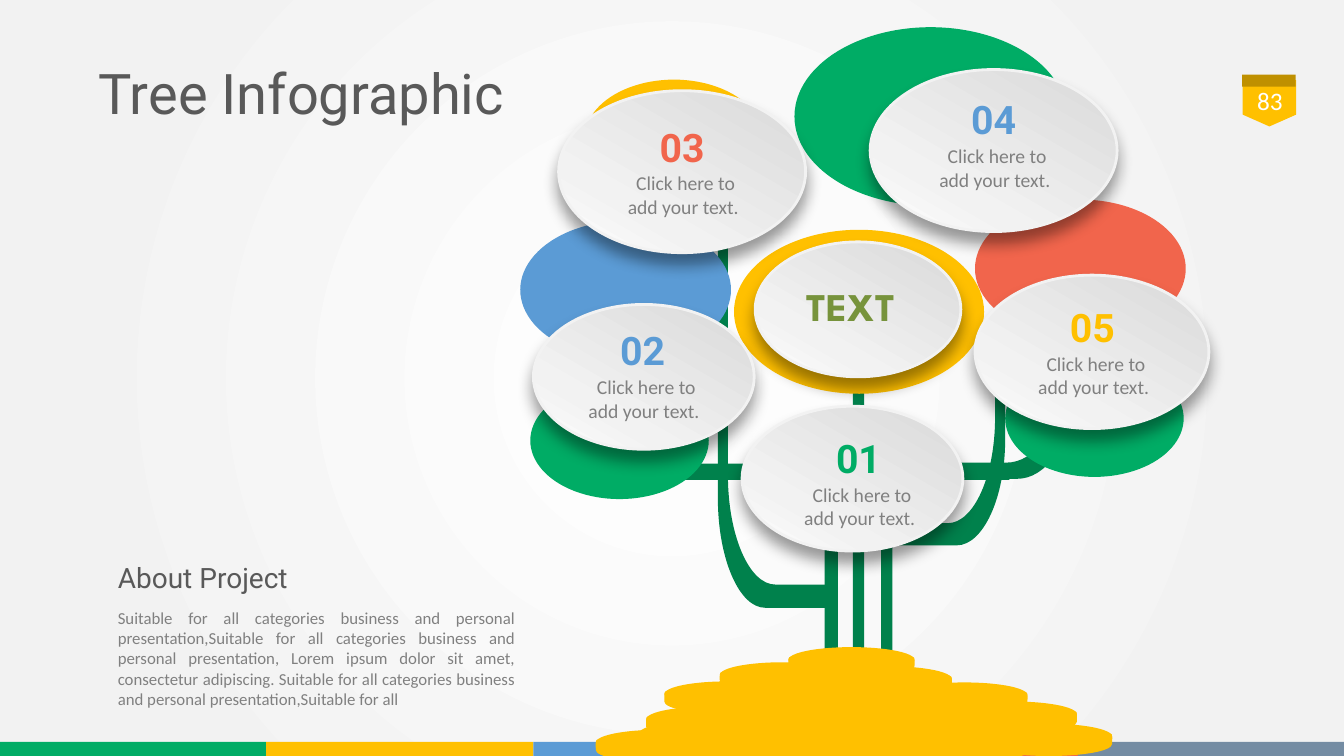
from pptx import Presentation
from pptx.dml.color import RGBColor
from pptx.enum.shapes import MSO_SHAPE
from pptx.enum.text import MSO_ANCHOR, PP_ALIGN
from pptx.oxml import parse_xml
from pptx.oxml.ns import nsdecls, qn
from pptx.util import Cm, Pt

OVAL, RECTANGLE, PENTAGON = MSO_SHAPE.OVAL, MSO_SHAPE.RECTANGLE, MSO_SHAPE.PENTAGON
LEFT, CENTER, JUSTIFY = PP_ALIGN.LEFT, PP_ALIGN.CENTER, PP_ALIGN.JUSTIFY
TOP, MIDDLE = MSO_ANCHOR.TOP, MSO_ANCHOR.MIDDLE

THEME = {
    "green": "00AC65", "yellow": "FFC000", "blue": "5B9BD5", "red": "F1654C",
    "slate": "748CA3", "gold": "BF9000", "branch": "00814C", "olive": "77933C",
    "rim": "F2F2F2", "heading": "595959", "body": "808080", "white": "FFFFFF",
    "background": [(0, "FFFFFF"), (81, "F2F2F2"), (100, "F2F2F2")],
    "card": [(1, "D9D9D9"), (71, "F2F2F2"), (100, "FFFFFF")],
    "title_size": 40, "number_size": 28, "subtitle_size": 20,
    "page_size": 18, "label_size": 14, "body_size": 12,
    "heading_font": "Roboto", "body_font": "Calibri", "center_font": "League Spartan",
}

# All positions and lengths are in inches.
SLIDE_WIDTH, SLIDE_HEIGHT = 13.33, 7.5
OVAL_RATIO = 0.656
STRIPE_HEIGHT = 0.14
STRIPES = [(0, "green"), (2.64, "yellow"), (5.29, "blue"), (8.04, "red"), (10.69, "slate")]

TITLE = "Tree Infographic"
PAGE_NUMBER = "83"
CENTER_TEXT = "TEXT"
LABEL = "Click here to add your text. "
ABOUT_TITLE = "About Project"
ABOUT_TEXT = (
    "Suitable for all categories business and personal presentation,"
    "Suitable for all categories business and personal presentation, "
    "Lorem ipsum dolor sit amet, consectetur adipiscing. "
    "Suitable for all categories business and personal presentation,Suitable for all"
)

# Outlines: a pair is a straight step, six numbers are a Bézier step.
BRANCHES = [
    [(7.3, 0.97), (7.25, 1.14, 7.22, 1.36, 7.22, 1.59), (7.22, 4.71),
     (7.22, 5.31, 7.43, 5.8, 7.69, 5.8), (8.28, 5.8), (8.28, 6.03), (7.59, 6.03),
     (7.33, 6.03, 7.12, 5.54, 7.12, 4.94), (7.12, 1.82), (7.12, 1.47, 7.19, 1.16, 7.3, 0.97)],
    [(6.76, 4.6), (7.67, 4.6), (8.03, 4.6, 8.31, 4.93, 8.31, 5.35), (8.31, 7.37),
     (8.18, 7.37), (8.18, 5.51), (8.18, 5.09, 7.9, 4.76, 7.55, 4.76), (6.76, 4.76)],
    [(9.78, 0.52), (9.84, 0.69, 9.87, 0.9, 9.87, 1.12), (9.87, 4.14),
     (9.87, 4.72, 9.66, 5.19, 9.4, 5.19), (8.81, 5.19), (8.81, 5.41), (9.49, 5.41),
     (9.75, 5.41, 9.97, 4.94, 9.97, 4.36), (9.97, 1.35), (9.97, 1.01, 9.9, 0.71, 9.78, 0.52)],
    [(10.41, 1.26), (10.47, 1.38, 10.5, 1.53, 10.5, 1.69), (10.5, 3.84),
     (10.5, 4.25, 10.27, 4.59, 9.98, 4.59), (9.34, 4.59), (9.34, 4.75), (10.09, 4.75),
     (10.37, 4.75, 10.61, 4.41, 10.61, 4), (10.61, 1.85),
     (10.61, 1.61, 10.53, 1.4, 10.41, 1.26)],
    [(9.27, 4.6), (10.01, 4.6), (10.01, 4.76), (9.37, 4.76),
     (9.08, 4.76, 8.85, 5.09, 8.85, 5.51), (8.85, 7.5), (8.74, 7.5), (8.74, 5.35),
     (8.74, 4.93, 8.98, 4.6, 9.27, 4.6)],
]
TRUNK = (8.46, 3.29, 0.11, 4.2)

# left, top, width, colour
LEAVES = [
    (7.28, 2.28, 2.48, "yellow"), (9.97, 3.57, 1.77, "green"), (9.67, 1.98, 2.09, "red"),
    (7.88, 0.27, 2.7, "green"), (5.26, 3.79, 1.77, "green"), (5.16, 2.19, 2.09, "blue"),
    (5.8, 0.79, 1.77, "yellow"),
]
# left, top, width
CARDS = [(7.36, 4.03, 2.19), (7.49, 2.4, 2.04), (5.29, 3.02, 2.19),
         (8.63, 0.69, 2.45), (9.67, 2.73, 2.32), (5.54, 0.9, 2.45)]
# number, left, top, colour
NUMBERS = [("01", 8.05, 4.35, "green"), ("02", 5.91, 3.28, "blue"), ("03", 6.3, 1.26, "red"),
           ("04", 9.39, 0.99, "blue"), ("05", 10.37, 3.05, "yellow")]

# Side of a coin, measured from the corner of its top face.
COIN_SIDE = [(0, 0.2), (-0.01, -0.03, 0.02, 0.2, 0.62, 0.08),
             (1.26, 0.19, 1.26, -0.02, 1.25, 0.2), (1.25, 0.27, 0.97, 0.32, 0.62, 0.32),
             (0.28, 0.32, 0, 0.27, 0, 0.2)]
COIN_SIZE = (1.25, 0.25)
COINS = [
    (6.41, 7.01), (7.06, 6.86), (7.99, 6.84), (8.91, 6.99), (8.94, 6.77), (8.19, 6.61),
    (7.29, 6.67), (7.14, 6.57), (7.82, 6.42), (7.38, 7.05), (8.21, 6.99), (6.59, 6.76),
    (5.91, 7.24), (6.34, 7.15), (7.02, 7.25), (8.04, 7.27), (8.96, 7.24), (9.78, 7.18),
    (9.43, 6.96),
]


def inches(value):
    return Cm(value * 2.54)


def color(name):
    return RGBColor.from_string(THEME[name])


def set_gradient(properties, stops, direction):
    """Replace the solid fill in properties; direction is the XML after the stops."""
    stop_xml = "".join(
        f'<a:gs pos="{position * 1000}"><a:srgbClr val="{value}"/></a:gs>'
        for position, value in stops)
    gradient = parse_xml(f'<a:gradFill {nsdecls("a")} rotWithShape="1">'
                         f"<a:gsLst>{stop_xml}</a:gsLst>{direction}</a:gradFill>")
    properties.replace(properties.find(qn("a:solidFill")), gradient)


def paint(shape, fill):
    shape.element.remove(shape.element.find(qn("p:style")))
    shape.shadow.inherit = False
    shape.fill.solid()
    shape.fill.fore_color.rgb = color(fill)
    shape.line.fill.background()
    return shape


def add_preset(slide, kind, box, fill):
    return paint(slide.shapes.add_shape(kind, *map(inches, box)), fill)


def add_oval(slide, left, top, width, fill):
    return add_preset(slide, OVAL, (left, top, width, width * OVAL_RATIO), fill)


def add_outline(slide, steps, fill, left=0, top=0):
    """Draw a closed outline, then join the three points of each Bézier step."""
    points = [(inches(left + x), inches(top + y))
              for step in steps for x, y in zip(step[::2], step[1::2])]
    builder = slide.shapes.build_freeform(*points[0])
    builder.add_line_segments(points[1:], close=True)
    shape = paint(builder.convert_to_shape(), fill)
    segments = iter(list(shape.element.iter(qn("a:lnTo"))))
    for step in steps[1:]:
        curve = next(segments)
        if len(step) == 6:
            bezier = parse_xml(f'<a:cubicBezTo {nsdecls("a")}/>')
            curve.addprevious(bezier)
            for segment in (curve, next(segments), next(segments)):
                bezier.append(segment[0])
                segment.getparent().remove(segment)


def add_card(slide, left, top, width):
    card = add_oval(slide, left, top, width, "rim")
    card.line.color.rgb = color("rim")
    card.line.width = Pt(2)
    properties = card.element.spPr
    set_gradient(properties, THEME["card"], '<a:lin ang="7200000" scaled="0"/>')
    properties.find(qn("a:effectLst")).append(parse_xml(
        f'<a:outerShdw {nsdecls("a")} blurRad="{Pt(11)}" dist="{Pt(8)}" dir="5400000" '
        'algn="t" rotWithShape="0"><a:srgbClr val="000000"><a:alpha val="40000"/>'
        "</a:srgbClr></a:outerShdw>"))


def add_text(slide, text, box, size, fill, font="body_font", align=LEFT,
             anchor=TOP, bold=False, spacing=1.0):
    frame = slide.shapes.add_textbox(*map(inches, box)).text_frame
    frame.word_wrap = True
    frame.vertical_anchor = anchor
    paragraph = frame.paragraphs[0]
    paragraph.alignment = align
    paragraph.line_spacing = spacing
    run = paragraph.add_run()
    run.text = text
    run.font.name = THEME[font]
    run.font.size = Pt(THEME[size])
    run.font.bold = bold
    run.font.color.rgb = color(fill)


def main():
    presentation = Presentation()
    presentation.slide_width = inches(SLIDE_WIDTH)
    presentation.slide_height = inches(SLIDE_HEIGHT)
    slide = presentation.slides.add_slide(presentation.slide_layouts[6])
    slide.background.fill.solid()
    set_gradient(slide.element.find(".//" + qn("p:bgPr")), THEME["background"],
                 '<a:path path="circle"><a:fillToRect l="50000" t="50000" r="50000" '
                 'b="50000"/></a:path>')

    badge = add_preset(slide, PENTAGON, (12.36, 0.76, 0.46, 0.53), "yellow")
    badge.rotation = 90
    badge.adjustments[0] = 0.255
    add_preset(slide, RECTANGLE, (12.32, 0.74, 0.53, 0.12), "gold")
    ends = [left for left, _ in STRIPES[1:]] + [SLIDE_WIDTH]
    for (left, fill), end in zip(STRIPES, ends):
        box = (left, SLIDE_HEIGHT - STRIPE_HEIGHT, end - left, STRIPE_HEIGHT)
        add_preset(slide, RECTANGLE, box, fill)
    add_text(slide, TITLE, (0.88, 0.56, 11.7, 0.8), "title_size", "heading",
             "heading_font", anchor=MIDDLE, spacing=0.9)
    add_text(slide, PAGE_NUMBER, (12.29, 0.74, 0.61, 0.52), "page_size", "white",
             align=CENTER, anchor=MIDDLE)

    for branch in BRANCHES:
        add_outline(slide, branch, "branch")
    add_preset(slide, RECTANGLE, TRUNK, "branch")
    for leaf in LEAVES:
        add_oval(slide, *leaf)
    for card in CARDS:
        add_card(slide, *card)

    add_text(slide, CENTER_TEXT, (7.81, 2.84, 1.26, 0.48), "number_size", "olive",
             "center_font", CENTER, bold=True, spacing=0.8)
    for number, left, top, fill in NUMBERS:
        add_text(slide, number, (left, top, 0.93, 0.49), "number_size", fill,
                 "heading_font", CENTER, bold=True, spacing=0.8)
        add_text(slide, LABEL, (left - 0.18, top + 0.39, 1.36, 0.57), "label_size", "body",
                 align=CENTER)

    for left, top in COINS:
        add_outline(slide, COIN_SIDE, "yellow", left, top)
        add_preset(slide, OVAL, (left, top, *COIN_SIZE), "yellow")

    add_text(slide, ABOUT_TITLE, (1.07, 5.51, 4.33, 0.44), "subtitle_size", "heading",
             "heading_font")
    add_text(slide, ABOUT_TEXT, (1.07, 5.98, 4.14, 1.11), "body_size", "body", align=JUSTIFY)
    presentation.save("out.pptx")


if __name__ == "__main__":
    main()
